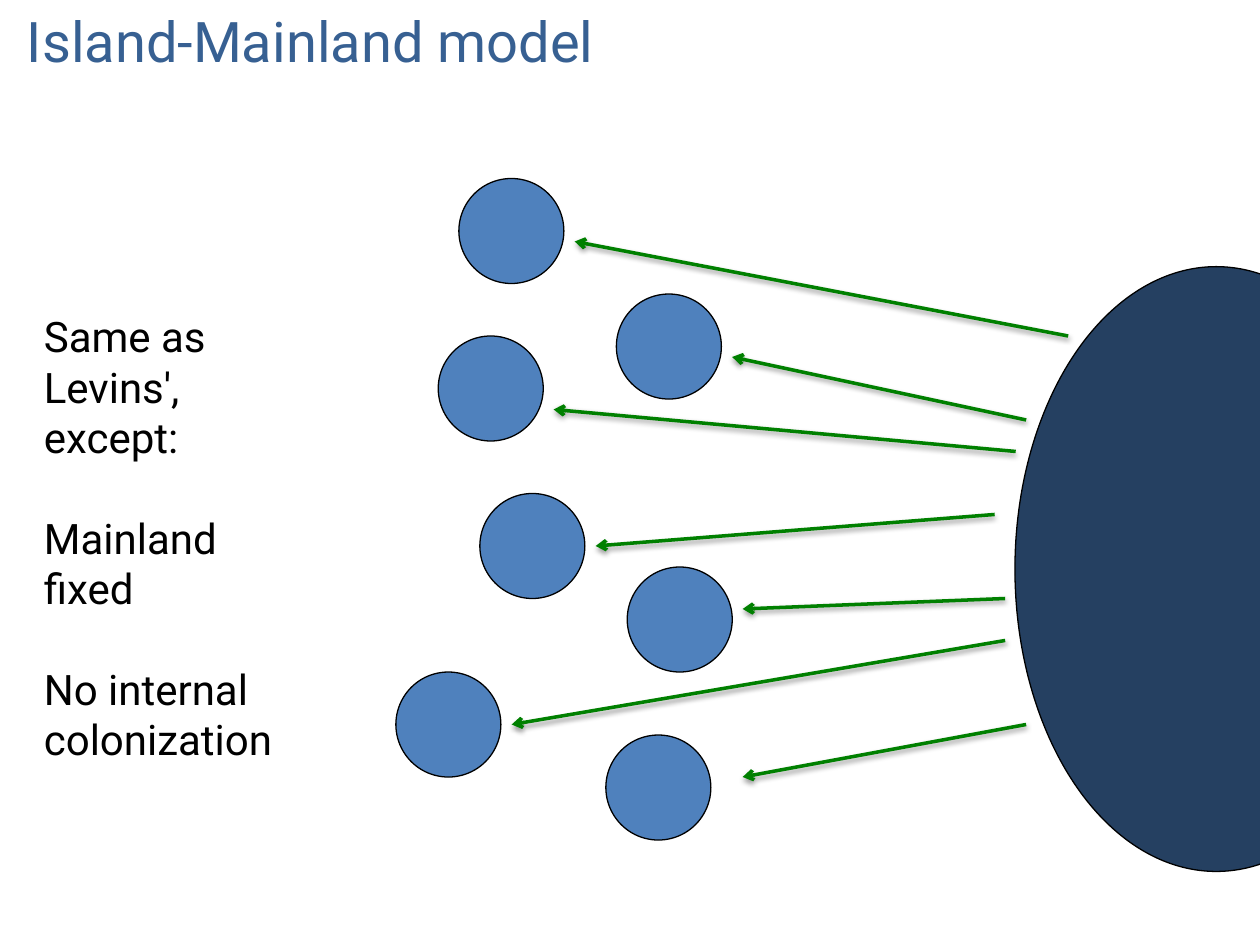
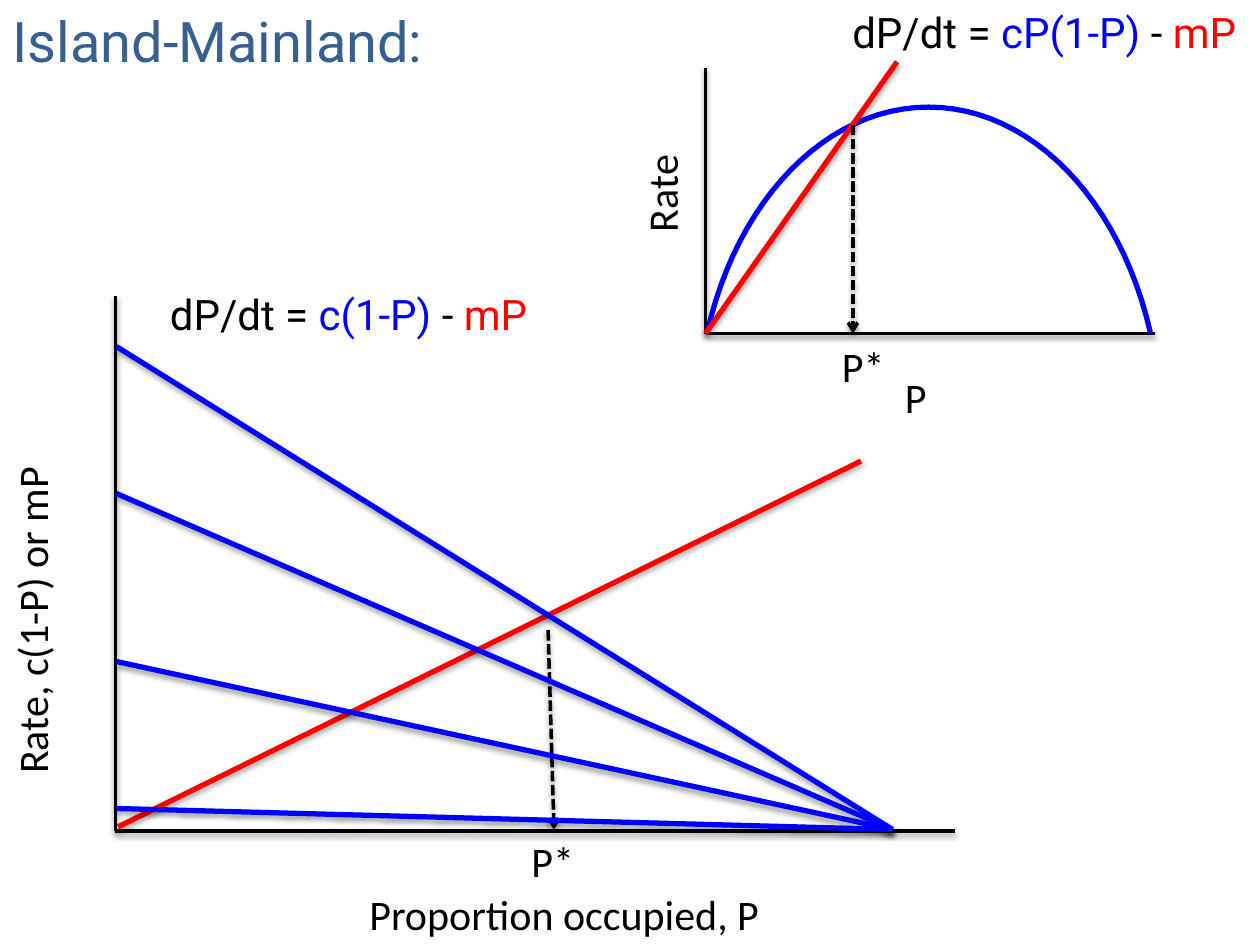
import copy
from dataclasses import dataclass
from typing import Union

from lxml import etree
from pptx import Presentation
from pptx import util as u
from pptx.dml import color
from pptx.enum import dml, shapes, text
from pptx.oxml import ns
from pptx.shapes import shapetree as tree

Pt = u.Pt
Shapes = Union[tree.SlideShapes, tree.GroupShapes]
Point = tuple[float, float]

COLORS = {
    "title": "376092",
    "island": "4F81BD",
    "mainland": "254061",
    "migration": "008000",
    "ink": "000000",
    "colonization": "0000FF",
    "extinction": "FF0000",
}
HEADING_FONT, LABEL_FONT = "Roboto", "Calibri"
ISLAND_SIZE = 60
LINE_HEIGHT = 28.8
SHADOW = etree.fromstring(
    f'<a:effectLst xmlns:a="{ns.nsdecls("a").split(chr(34))[1]}">'
    '<a:outerShdw blurRad="39370" dist="20320" dir="5400000" rotWithShape="0">'
    '<a:srgbClr val="000000"><a:alpha val="38000"/></a:srgbClr>'
    "</a:outerShdw></a:effectLst>"
)


@dataclass(frozen=True)
class Run:
    words: str
    color: str = "ink"


@dataclass(frozen=True)
class Label:
    left: float
    top: float
    width: float
    height: float
    paragraphs: list[list[Run]]
    font: str = LABEL_FONT
    size: float = 24
    rotation: float = 0
    wrap: bool = True
    centered: bool = False
    gap: float = 0


@dataclass(frozen=True)
class Stroke:
    start: Point
    end: Point
    color: str = "ink"
    width: float = 2
    arrow: bool = False
    dashed: bool = False


def rgb(name: str) -> color.RGBColor:
    return color.RGBColor.from_string(COLORS[name])


def draw_label(target: Shapes, label: Label) -> None:
    box = target.add_textbox(Pt(label.left), Pt(label.top), Pt(label.width), Pt(label.height))
    box.rotation = label.rotation
    frame = box.text_frame
    frame.word_wrap = label.wrap
    frame.auto_size = text.MSO_AUTO_SIZE.SHAPE_TO_FIT_TEXT
    for index, runs in enumerate(label.paragraphs):
        paragraph = frame.add_paragraph() if index else frame.paragraphs[0]
        paragraph.font.name = label.font
        paragraph.font.size = Pt(label.size)
        paragraph.alignment = text.PP_ALIGN.CENTER if label.centered else text.PP_ALIGN.LEFT
        if index:
            paragraph.space_before = Pt(label.gap)
        same_color = len({run.color for run in runs}) == 1
        if same_color:
            paragraph.font.color.rgb = rgb(runs[0].color)
        for run in runs:
            part = paragraph.add_run()
            part.text = run.words
            if not same_color:
                part.font.color.rgb = rgb(run.color)


def draw_title(target: Shapes, words: str, left: float, width: float, centered: bool) -> None:
    draw_label(target, Label(left, 0, width, 46, [[Run(words, "title")]], HEADING_FONT, 32,
                             wrap=not centered, centered=centered))


def draw_equation(target: Shapes, left: float, top: float, width: float, gain: str) -> None:
    runs = [Run("dP/dt = "), Run(gain, "colonization"), Run(" - "), Run("mP", "extinction")]
    draw_label(target, Label(left, top, width, 36, [runs], HEADING_FONT, wrap=False))


def draw_stroke(target: Shapes, stroke: Stroke) -> None:
    connector = target.add_connector(
        shapes.MSO_CONNECTOR.STRAIGHT, *(Pt(value) for value in stroke.start + stroke.end))
    connector.line.color.rgb = rgb(stroke.color)
    connector.line.width = Pt(stroke.width)
    if stroke.dashed:
        connector.line.dash_style = dml.MSO_LINE.SQUARE_DOT
    properties = connector.element.spPr
    if stroke.arrow:
        outline = properties.find(ns.qn("a:ln"))
        etree.SubElement(outline, ns.qn("a:tailEnd"), type="arrow")
    properties.append(copy.deepcopy(SHADOW))


def draw_ellipse(target: Shapes, left: float, top: float, width: float, height: float,
                 fill: str) -> None:
    ellipse = target.add_shape(
        shapes.MSO_SHAPE.OVAL, Pt(left), Pt(top), Pt(width), Pt(height))
    ellipse.shadow.inherit = False
    ellipse.fill.solid()
    ellipse.fill.fore_color.rgb = rgb(fill)
    ellipse.line.color.rgb = rgb("ink")
    ellipse.line.width = Pt(0.75)


def bezier(controls: list[Point], steps: int = 24) -> list[Point]:
    a, b, c, d = controls
    points = []
    for step in range(1, steps + 1):
        t = step / steps
        weights = ((1 - t) ** 3, 3 * t * (1 - t) ** 2, 3 * t * t * (1 - t), t ** 3)
        points.append(tuple(sum(w * p[axis] for w, p in zip(weights, (a, b, c, d)))
                            for axis in (0, 1)))
    return points


def draw_colonization_curve(target: Shapes) -> None:
    left, peak, right = (404, 190.5), (530.6, 61.2), (657.4, 190.2)
    points = (bezier([left, (421.2, 113.8), (472.3, 61.2), peak])
              + bezier([peak, (589, 61.2), (640, 113.8), right]))
    builder = target.build_freeform(Pt(left[0]), Pt(left[1]))
    builder.add_line_segments([(Pt(x), Pt(y)) for x, y in points], close=False)
    curve = builder.convert_to_shape()
    curve.shadow.inherit = False
    curve.fill.background()
    curve.line.color.rgb = rgb("colonization")
    curve.line.width = Pt(3)


def build_model(target: Shapes) -> None:
    draw_title(target, "Island-Mainland model", 1.5, 352, True)
    draw_ellipse(target, 580, 152.4, 230, 345.6, "mainland")
    islands = [(262.2, 102), (274.2, 282), (358.4, 324), (226.2, 384),
               (346.2, 420), (250.4, 192), (352.2, 168)]
    for left, top in islands:
        draw_ellipse(target, left, top, ISLAND_SIZE, ISLAND_SIZE, "island")
    migrations = [
        ((610.4, 192), (328.4, 138)),
        ((586.4, 240), (418.4, 204)),
        ((580.4, 258), (316.4, 234)),
        ((568.4, 294), (340.4, 312)),
        ((574.4, 342), (424.4, 348)),
        ((586.4, 414), (424.4, 444)),
        ((574.4, 366), (292.4, 414)),
    ]
    for start, end in migrations:
        draw_stroke(target, Stroke(start, end, "migration", arrow=True))
    assumptions = ["Same as Levins', except:", "Mainland fixed", "No internal colonization"]
    draw_label(target, Label(18, 174, 156, 269, [[Run(words)] for words in assumptions],
                             HEADING_FONT, gap=LINE_HEIGHT))


def build_levins_graph(target: Shapes) -> None:
    origin = (403.2, 190.6)
    draw_label(target, Label(510, 209, 31, 29.5, [[Run("P")]]))
    draw_stroke(target, Stroke((403.2, 39), origin))
    draw_stroke(target, Stroke((660, 190.6), origin))
    draw_label(target, Label(336, 86.4, 77, 29.5, [[Run("Rate")]], rotation=270))
    draw_colonization_curve(target)
    draw_stroke(target, Stroke(origin, (512.6, 35.3), "extinction", 3))
    draw_equation(target, 480, 0, 235, "cP(1-P)")
    draw_stroke(target, Stroke((487.4, 71.3), (487.4, 190.6), arrow=True, dashed=True))
    draw_label(target, Label(474, 190.8, 51, 29.5, [[Run("P*")]]))


def build_mainland_graph(target: Shapes) -> None:
    origin = (66, 475)
    draw_label(target, Label(204, 504, 288, 36, [[Run("Proportion occupied, P")]]))
    draw_label(target, Label(-126, 287.3, 288, 36, [[Run("Rate, c(1-P) or mP")]], rotation=270))
    draw_equation(target, 90, 161.3, 220, "c(1-P)")
    draw_stroke(target, Stroke((313.2, 360), (316.6, 474), arrow=True, dashed=True))
    draw_label(target, Label(296.6, 474, 48, 36, [[Run("P*")]]))
    draw_stroke(target, Stroke((66, 169.2), origin))
    draw_stroke(target, Stroke((546, 475), origin))
    draw_stroke(target, Stroke((67.5, 472.5), (492, 263.5), "extinction", 3))
    for intercept in (198, 282, 378, 462):
        draw_stroke(target, Stroke((66.5, intercept), (510, 474), "colonization", 3))


def main() -> None:
    deck = Presentation()
    deck.slide_width, deck.slide_height = Pt(720), Pt(540)
    blank = deck.slide_layouts[6]
    build_model(deck.slides.add_slide(blank).shapes)
    equilibrium = deck.slides.add_slide(blank).shapes
    draw_title(equilibrium, "Island-Mainland:", 0, 661, False)
    build_levins_graph(equilibrium.add_group_shape().shapes)
    build_mainland_graph(equilibrium.add_group_shape().shapes)
    deck.save("out.pptx")


if __name__ == "__main__":
    main()
